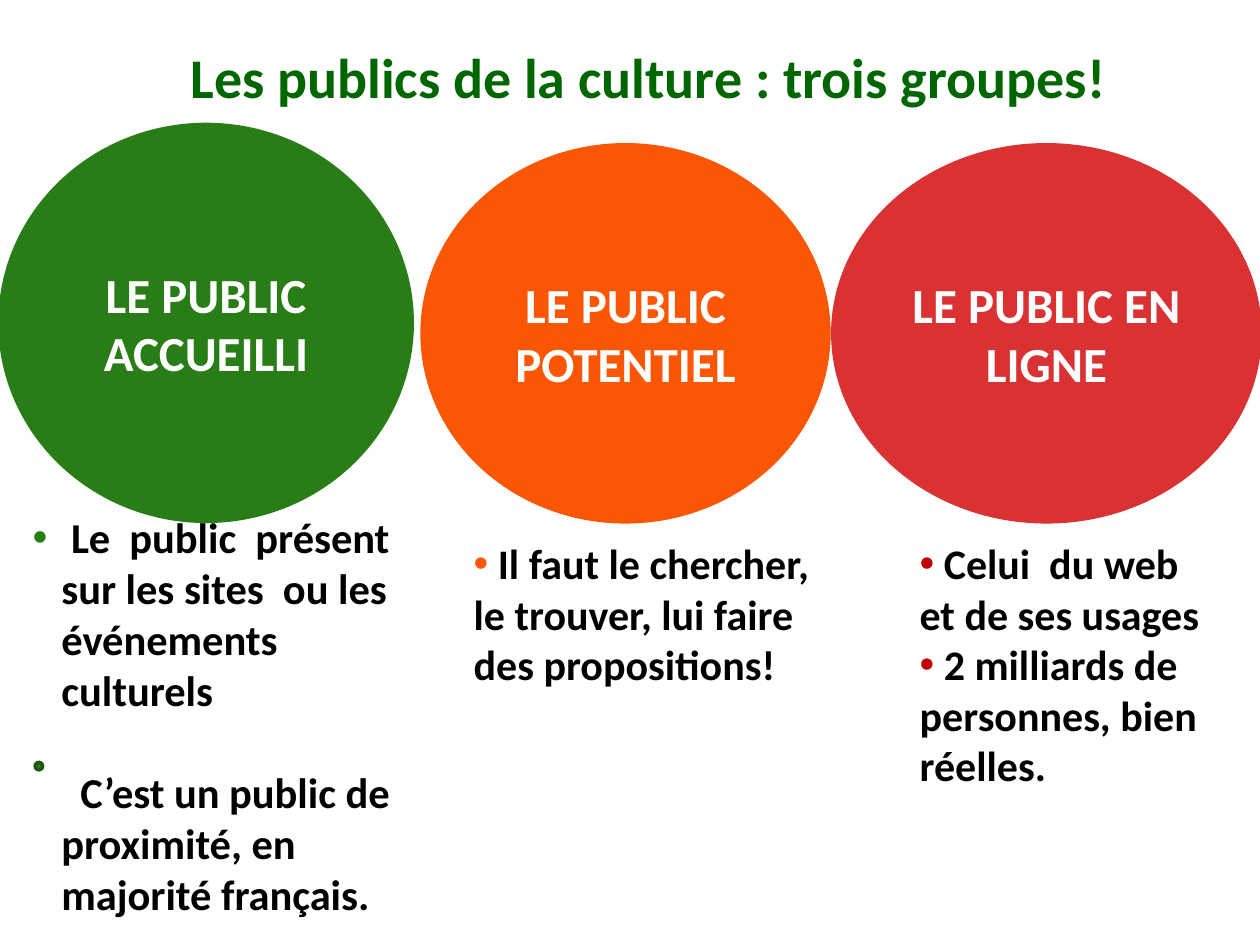
from lxml import etree
from pptx import Presentation
from pptx import util as u
from pptx.dml.color import RGBColor
from pptx.enum import shapes, text
from pptx.oxml.ns import qn

FONT = "Calibri"
GREEN, ORANGE, RED = "287D17", "FB5603", "DA3232"


def color(hex_value):
    return RGBColor.from_string(hex_value)


def add_run(paragraph, words, size, ink):
    run = paragraph.add_run()
    run.text = words
    run.font.name = FONT
    run.font.size = u.Pt(size)
    run.font.bold = True
    run.font.color.rgb = color(ink)


def set_indent(paragraph, margin, indent):
    props = paragraph._p.get_or_add_pPr()
    props.set("marL", str(u.Cm(margin)))
    props.set("indent", str(u.Cm(indent)))


def add_bullet(paragraph, ink):
    props = paragraph._p.get_or_add_pPr()
    bullet_color = etree.SubElement(props, qn("a:buClr"))
    etree.SubElement(bullet_color, qn("a:srgbClr"), val=ink)
    etree.SubElement(props, qn("a:buFont"), typeface="Arial")
    etree.SubElement(props, qn("a:buChar"), char="•")


def add_text_frame(slide, box):
    frame = slide.shapes.add_textbox(*map(u.Cm, box)).text_frame
    frame.word_wrap = True
    return frame


def add_disc(slide, box, fill, outline):
    disc = slide.shapes.add_shape(shapes.MSO_SHAPE.OVAL, *map(u.Cm, box))
    disc.shadow.inherit = False
    disc.fill.solid()
    disc.fill.fore_color.rgb = color(fill)
    disc.line.color.rgb = color(outline)
    disc.line.width = u.Pt(2)
    return disc


def add_heading(slide, box):
    heading = add_text_frame(slide, box).paragraphs[0]
    heading.alignment = text.PP_ALIGN.CENTER
    add_run(heading, "Les publics de la culture : trois groupes! ", 32, "006600")


def add_group(slide, box, label, fill):
    """Disc that names one of the three audiences."""
    frame = add_disc(slide, box, fill, fill).text_frame
    frame.word_wrap = True
    frame.vertical_anchor = text.MSO_ANCHOR.MIDDLE
    name = frame.paragraphs[0]
    name.alignment = text.PP_ALIGN.CENTER
    add_run(name, label, 28, "FFFFFF")


def add_points(slide, box, points, bullet_ink):
    """Bulleted remarks whose wrapped lines return to the margin."""
    frame = add_text_frame(slide, box)
    for index, point in enumerate(points):
        paragraph = frame.add_paragraph() if index else frame.paragraphs[0]
        set_indent(paragraph, 0, 0)
        add_bullet(paragraph, bullet_ink)
        add_run(paragraph, point, 24, "000000")


def add_welcomed_points(slide, box):
    """Hanging bullet, then a remark marked by a small dot."""
    left, top, _, _ = box
    frame = add_text_frame(slide, box)
    frame.margin_top = frame.margin_bottom = 0

    presence = frame.paragraphs[0]
    set_indent(presence, 0.58, -0.58)
    add_bullet(presence, GREEN)
    add_run(presence, " Le  public  présent sur les sites  ou les événements culturels",
            24.3, "000000")

    proximity = frame.add_paragraph()
    proximity.space_before = u.Pt(29.2)
    set_indent(proximity, 0.58, 0.38)
    add_run(proximity, "C’est un public de proximité, en majorité français.",
            24.3, "000000")

    add_disc(slide, (left + 0.3, top + 5.06, 0.15, 0.15), GREEN, "1D5711")


def main():
    deck = Presentation()
    deck.slide_width, deck.slide_height = u.Cm(25.4), u.Cm(19.05)
    slide = deck.slides.add_slide(deck.slide_layouts[6])

    # Welcomed audience: the disc overlaps the top of its remarks
    add_welcomed_points(slide, (0.41, 10.31, 8.51, 8.7))
    add_group(slide, (0, 2.51, 8.31, 8), "LE PUBLIC ACCUEILLI", GREEN)

    # Potential audience
    add_group(slide, (8.51, 2.92, 8.2, 7.6), "LE PUBLIC POTENTIEL", ORANGE)
    add_points(slide, (9.3, 10.72, 7.59, 3.33),
               [" Il faut le chercher, le trouver, lui faire des propositions!"],
               ORANGE)

    # Online audience
    add_group(slide, (16.79, 2.92, 8.61, 7.6), "LE PUBLIC EN LIGNE", RED)
    add_points(slide, (18.29, 10.72, 6.2, 5.38),
               [" Celui  du web et de ses usages",
                " 2 milliards de personnes, bien réelles."],
               "C00000")

    # Heading
    add_heading(slide, (1.9, 0.74, 22.61, 1.63))

    deck.save("out.pptx")


if __name__ == "__main__":
    main()
